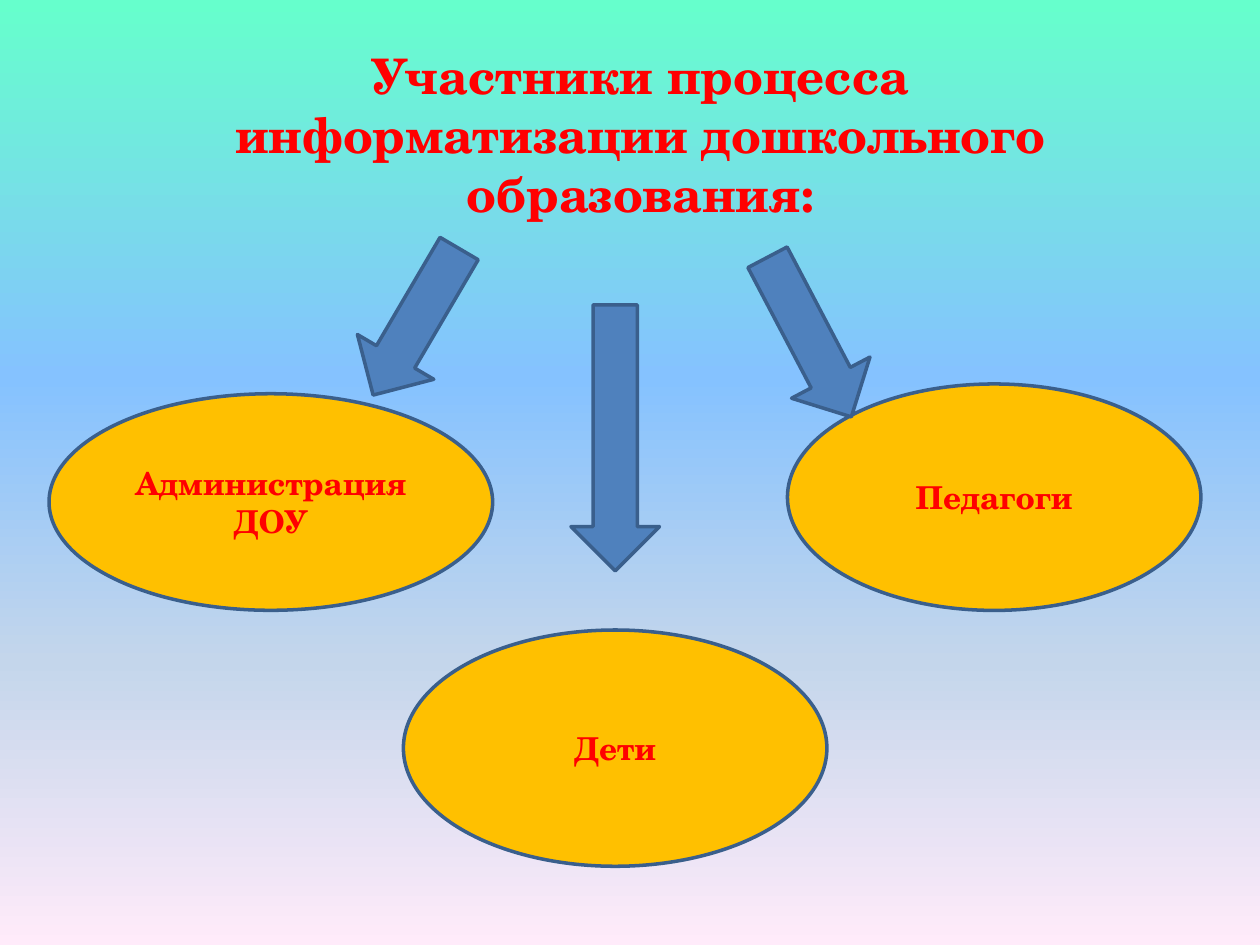
from dataclasses import dataclass

from lxml import etree
from pptx import Presentation
from pptx.dml.color import RGBColor
from pptx.enum.shapes import MSO_SHAPE
from pptx.enum.text import MSO_ANCHOR, MSO_AUTO_SIZE, PP_ALIGN
from pptx.oxml.ns import qn
from pptx.util import Pt

OVAL, ARROW = MSO_SHAPE.OVAL, MSO_SHAPE.DOWN_ARROW
TOP, MIDDLE = MSO_ANCHOR.TOP, MSO_ANCHOR.MIDDLE
GROW, CENTER = MSO_AUTO_SIZE.SHAPE_TO_FIT_TEXT, PP_ALIGN.CENTER


@dataclass(frozen=True)
class Theme:
    """Colours and type of the slide."""
    face: str = "TeX Gyre Schola"
    ink: str = "FF0000"
    oval: str = "FFC000"
    arrow: str = "4F81BD"
    edge: str = "3A5F8C"
    head: int = 28
    label: int = 18
    line: int = 2
    sky: tuple = ((0, "66FFCC"), (40, "85C2FF"), (70, "C4D6EB"), (100, "FFEBFA"))


THEME = Theme()
TITLE = "Участники процесса информатизации дошкольного образования:"
HEAD = (96, 22.5, 540, 108.5)
ROLES = (
    ("Администрация ДОУ", (28, 225, 253.5, 123.75)),
    ("Дети", (230.5, 360, 242, 135)),
    ("Педагоги", (450, 219.4, 236.25, 129.4)),
)
ARROWS = (
    ((326.25, 174.25, 50.6, 152), 0),
    ((212.5, 135.35, 50.6, 97.1), 30.4),
    ((437.25, 141.1, 50.6, 103), 332.3),
)


def paint_sky(slide):
    """Fill the background with the vertical gradient."""
    fill = slide.background.fill
    fill.gradient()
    fill.gradient_angle = 270
    stops = slide.element.find(".//" + qn("a:gsLst"))
    for stop in list(stops):
        stops.remove(stop)
    for place, tone in THEME.sky:
        stop = etree.SubElement(stops, qn("a:gs"), pos=str(place * 1000))
        etree.SubElement(stop, qn("a:srgbClr"), val=tone)


def write(shape, text, size, anchor):
    """Put bold centred text into a shape."""
    frame = shape.text_frame
    frame.text = text
    frame.word_wrap = True
    frame.vertical_anchor = anchor
    para = frame.paragraphs[0]
    para.alignment = CENTER
    font = para.runs[0].font
    form = {"name": THEME.face, "size": Pt(size), "bold": True}
    for key, value in form.items():
        setattr(font, key, value)
    font.color.rgb = RGBColor.from_string(THEME.ink)


def place_head(slide, box):
    """Move the title placeholder into its box and fill it."""
    title = slide.shapes.title
    for key, value in zip(("left", "top", "width", "height"), box):
        setattr(title, key, Pt(value))
    write(title, TITLE, THEME.head, TOP)
    title.text_frame.auto_size = GROW


def add_form(slide, kind, box, tone):
    """Add an outlined shape without shadow."""
    shape = slide.shapes.add_shape(kind, *map(Pt, box))
    shape.shadow.inherit = False
    shape.fill.solid()
    shape.fill.fore_color.rgb = RGBColor.from_string(tone)
    shape.line.color.rgb = RGBColor.from_string(THEME.edge)
    shape.line.width = Pt(THEME.line)
    return shape


def add_role(slide, text, box):
    """Add one participant as a labelled oval."""
    write(add_form(slide, OVAL, box, THEME.oval), text, THEME.label, MIDDLE)


def add_arrow(slide, box, turn):
    """Add one turned arrow from the title to a role."""
    add_form(slide, ARROW, box, THEME.arrow).rotation = turn


def main():
    """Build and save the slide."""
    deck = Presentation()
    deck.slide_width, deck.slide_height = Pt(720), Pt(540)
    slide = deck.slides.add_slide(deck.slide_layouts.get_by_name("Title Only"))
    paint_sky(slide)
    place_head(slide, HEAD)
    for text, box in ROLES:
        add_role(slide, text, box)
    for box, turn in ARROWS:
        add_arrow(slide, box, turn)
    deck.save("out.pptx")


if __name__ == "__main__":
    main()
